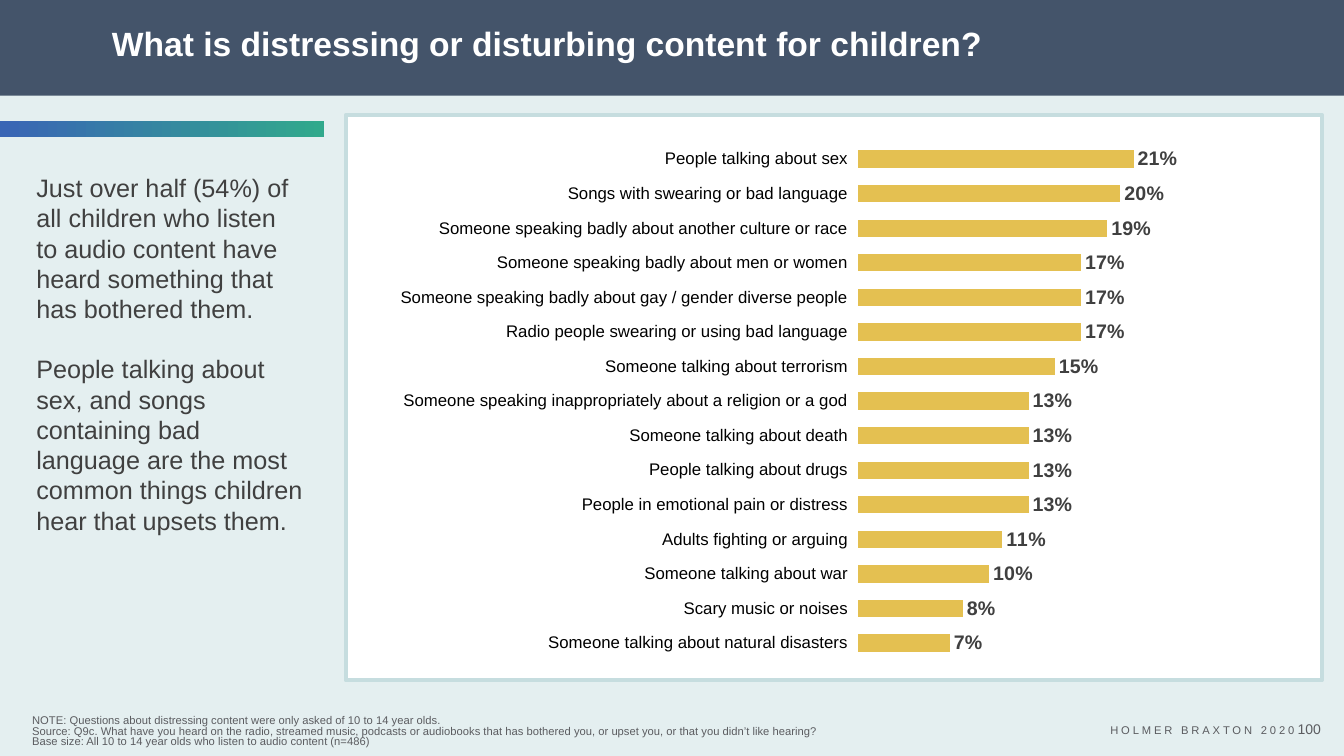
from dataclasses import dataclass

from lxml import etree
from pptx import Presentation
from pptx.chart.data import CategoryChartData
from pptx.dml.color import RGBColor
from pptx.enum.chart import XL_CHART_TYPE, XL_LABEL_POSITION, XL_TICK_LABEL_POSITION, XL_TICK_MARK
from pptx.enum.shapes import MSO_SHAPE
from pptx.enum.text import MSO_ANCHOR, MSO_AUTO_SIZE, PP_ALIGN
from pptx.oxml.ns import qn
from pptx.util import Inches, Pt

BAR = XL_CHART_TYPE.BAR_CLUSTERED
OUTSIDE = XL_LABEL_POSITION.OUTSIDE_END
LOW = XL_TICK_LABEL_POSITION.LOW
NO_TICK = XL_TICK_MARK.NONE
RECTANGLE = MSO_SHAPE.RECTANGLE
MIDDLE, TOP = MSO_ANCHOR.MIDDLE, MSO_ANCHOR.TOP
LEFT, RIGHT = PP_ALIGN.LEFT, PP_ALIGN.RIGHT

TITLE = "What is distressing or disturbing content for children?"
SUMMARY = [
    "Just over half (54%) of all children who listen to audio content have heard something that has bothered them.",
    "People talking about sex, and songs containing bad language are the most common things children hear that upsets them.",
]
NOTES = [
    "NOTE: Questions about distressing content were only asked of 10 to 14 year olds.",
    "Source: Q9c. What have you heard on the radio, streamed music, podcasts or audiobooks that has bothered you, or upset you, or that you didn’t like hearing?",
    "Base size: All 10 to 14 year olds who listen to audio content (n=486)",
]
CREDIT = "HOLMER BRAXTON 2020"
PAGE_NUMBER = "100"
ANSWERS = [
    ("People talking about sex", 0.21),
    ("Songs with swearing or bad language", 0.20),
    ("Someone speaking badly about another culture or race", 0.19),
    ("Someone speaking badly about men or women", 0.17),
    ("Someone speaking badly about gay / gender diverse people", 0.17),
    ("Radio people swearing or using bad language", 0.17),
    ("Someone talking about terrorism", 0.15),
    ("Someone speaking inappropriately about a religion or a god", 0.13),
    ("Someone talking about death", 0.13),
    ("People talking about drugs", 0.13),
    ("People in emotional pain or distress", 0.13),
    ("Adults fighting or arguing", 0.11),
    ("Someone talking about war", 0.10),
    ("Scary music or noises", 0.08),
    ("Someone talking about natural disasters", 0.07),
]

WIDTH, HEIGHT = 13.33, 7.5
HEADER_HEIGHT = 0.95
MARGIN = 0.22
CARD = (3.43, 1.14, 9.68, 5.61)
CHART = (3.42, 1.15, 9.22, 5.61)
PLOT = {"x": 0.552, "y": 0.046, "w": 0.353, "h": 0.917}


@dataclass(frozen=True)
class Theme:
    font: str = "Arial"
    backdrop: str = "E4EFF0"
    header: str = "44546A"
    white: str = "FFFFFF"
    black: str = "000000"
    card_line: str = "C6DDDF"
    accent_start: str = "3965B5"
    accent_end: str = "31A98C"
    bar: str = "E4C051"
    body: str = "404040"
    muted: str = "5B5C60"
    title_size: int = 24
    body_size: int = 18
    value_size: int = 14
    category_size: int = 12
    number_size: int = 10
    note_size: int = 8


THEME = Theme()


def color(code):
    return RGBColor.from_string(code)


def style(font, size, code, bold=False):
    font.name = THEME.font
    font.size = Pt(size)
    font.bold = bold
    font.color.rgb = color(code)


def place(area):
    return [Inches(length) for length in area]


def write(box, lines, size, code, bold=False, align=LEFT, anchor=MIDDLE, spacing=None, gap=0):
    frame = box.text_frame
    frame.word_wrap = True
    frame.auto_size = MSO_AUTO_SIZE.NONE
    frame.vertical_anchor = anchor
    for index, line in enumerate(lines):
        para = frame.add_paragraph() if index else frame.paragraphs[0]
        para.alignment = align
        para.space_before = Pt(gap if index else 0)
        if spacing:
            para.line_spacing = spacing
        span = para.add_run()
        span.text = line
        style(span.font, size, code, bold)
    return frame


def add_text(page, area, lines, size, code, **options):
    return write(page.shapes.add_textbox(*place(area)), lines, size, code, **options)


def add_panel(page, area, fill, line=None):
    panel = page.shapes.add_shape(RECTANGLE, *place(area))
    panel.shadow.inherit = False
    panel.fill.solid()
    panel.fill.fore_color.rgb = color(fill)
    if line:
        panel.line.color.rgb = color(line)
        panel.line.width = Pt(3)
    else:
        panel.line.fill.background()
    return panel


def add_answers_chart(page):
    data = CategoryChartData(number_format="0%")
    data.categories = [answer for answer, share in ANSWERS]
    data.add_series("Series 1", [share for answer, share in ANSWERS])
    chart = page.shapes.add_chart(BAR, *place(CHART), data).chart
    chart.has_legend = False
    chart.has_title = False
    style(chart.font, THEME.number_size, THEME.black)

    answers = chart.category_axis
    answers.reverse_order = True
    answers.major_tick_mark = NO_TICK
    answers.tick_label_position = LOW
    answers.format.line.fill.background()
    style(answers.tick_labels.font, THEME.category_size, THEME.black)

    shares = chart.value_axis
    shares.minimum_scale, shares.maximum_scale = 0, 0.25
    shares.has_major_gridlines = False
    shares.visible = False

    plot = chart.plots[0]
    plot.gap_width = 100
    plot.vary_by_categories = False
    bars = plot.series[0]
    bars.format.fill.solid()
    bars.format.fill.fore_color.rgb = color(THEME.bar)
    labels = bars.data_labels
    labels.show_value = True
    labels.position = OUTSIDE
    labels.number_format = "0%"
    labels.number_format_is_linked = False
    style(labels.font, THEME.value_size, THEME.body, True)

    plot_area = chart.element.find(".//" + qn("c:plotArea"))
    layout = plot_area.find(qn("c:layout"))
    if layout is None:
        layout = etree.Element(qn("c:layout"))
        plot_area.insert(0, layout)
    manual = etree.SubElement(layout, qn("c:manualLayout"))
    settings = [("layoutTarget", "inner"), ("xMode", "edge"), ("yMode", "edge"), *PLOT.items()]
    for name, value in settings:
        etree.SubElement(manual, qn("c:" + name)).set("val", str(value))


def main():
    deck = Presentation()
    deck.slide_width, deck.slide_height = Inches(WIDTH), Inches(HEIGHT)
    page = deck.slides.add_slide(deck.slide_layouts[5])
    page.background.fill.solid()
    page.background.fill.fore_color.rgb = color(THEME.backdrop)

    add_panel(page, (0, 0, WIDTH, HEADER_HEIGHT), THEME.header)
    title = page.shapes.title
    title.left, title.top, title.width, title.height = place((1.01, 0.15, 10.08, 0.6))
    write(title, [TITLE], THEME.title_size, THEME.white, bold=True, spacing=0.9)
    page.shapes.element.append(title.element)

    add_panel(page, CARD, THEME.white, THEME.card_line)
    add_answers_chart(page)

    accent = add_panel(page, (0, 1.2, 3.21, 0.16), THEME.accent_start)
    accent.fill.gradient()
    accent.fill.gradient_angle = 0
    for stop, code in zip(accent.fill.gradient_stops, (THEME.accent_start, THEME.accent_end)):
        stop.color.rgb = color(code)

    summary = add_text(page, (MARGIN, 1.62, 2.89, 3.78), SUMMARY, THEME.body_size, THEME.body, gap=21.5)
    summary.margin_left = Inches(0.14)
    add_text(page, (MARGIN, 7.02, 8.29, 0.48), NOTES, THEME.note_size, THEME.muted, spacing=0.8)
    credit = add_text(page, (10.7, 7.05, 2.24, 0.39), [CREDIT], THEME.note_size, THEME.muted, align=RIGHT)
    credit.paragraphs[0].runs[0].font._element.set("spc", "200")
    add_text(page, (12.74, 7.1, 0.46, 0.27), [PAGE_NUMBER], THEME.number_size, THEME.muted, align=RIGHT, anchor=TOP)
    deck.save("out.pptx")


if __name__ == "__main__":
    main()
